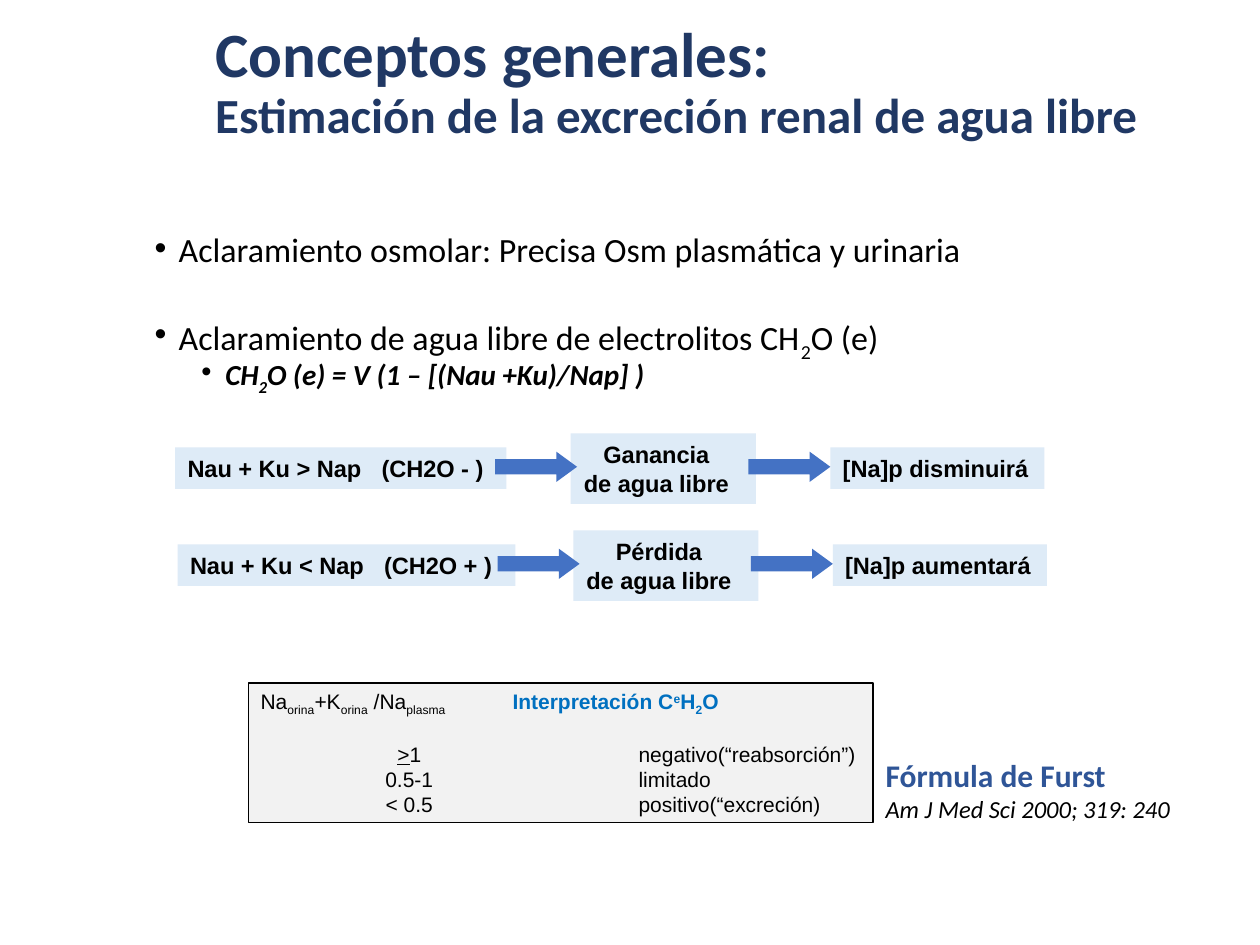
import pptx
import pptx.dml.color
import pptx.enum.shapes
import pptx.enum.text
import pptx.oxml.ns
import pptx.util
from lxml import etree

# The slide is a grid of 100 columns by 75 rows
CELL = pptx.util.Inches(0.1)
COLUMNS, ROWS = 100, 75
RECTANGLE = pptx.enum.shapes.MSO_SHAPE.RECTANGLE
ARROW = pptx.enum.shapes.MSO_SHAPE.RIGHT_ARROW
CENTER = pptx.enum.text.PP_ALIGN.CENTER
MIDDLE = pptx.enum.text.MSO_ANCHOR.MIDDLE
BLACK, NAVY, BLUE = "000000", "203864", "0070C0"
SUBSCRIPT, SUPERSCRIPT = -25000, 30000

# Each flow row: condition and its width, effect, result
FLOWS = [
    (("Nau + Ku > Nap\t(CH2O - )", 26.3), "Ganancia\vde agua libre", "[Na]p disminuirá"),
    (("Nau + Ku < Nap\t(CH2O + )", 26.8), "Pérdida\vde agua libre", "[Na]p aumentará"),
]


def cells(*counts):
    return [round(count * CELL) for count in counts]


def color(hex_string):
    return pptx.dml.color.RGBColor.from_string(hex_string)


def set_font(font, size, name, hex_string=BLACK, bold=False, italic=False):
    font.size, font.name = pptx.util.Pt(size), name
    font.color.rgb = color(hex_string)
    font.bold, font.italic = bold, italic


def add_child(parent, tag, **attributes):
    child = etree.SubElement(parent, pptx.oxml.ns.qn(tag))
    for key, value in attributes.items():
        child.set(key, str(value))
    return child


def add_runs(paragraph, *pieces):
    """Add plain strings, or (text, baseline) pairs for raised and lowered text."""
    runs = []
    for piece in pieces:
        text, baseline = (piece, 0) if isinstance(piece, str) else piece
        run = paragraph.add_run()
        run.text = text
        if baseline:
            run.font._element.set("baseline", str(baseline))
        runs.append(run)
    return runs


def set_tabs(paragraph, *stops):
    """Each stop is a column count and an alignment: l or ctr."""
    tab_list = add_child(paragraph._element.get_or_add_pPr(), "a:tabLst")
    for position, alignment in stops:
        add_child(tab_list, "a:tab", pos=cells(position)[0], algn=alignment)


def set_bullet(paragraph, indent):
    properties = paragraph._element.get_or_add_pPr()
    properties.set("marL", str(cells(indent)[0]))
    properties.set("indent", str(cells(-1.9)[0]))
    add_child(properties, "a:buFont", typeface="Arial")
    add_child(properties, "a:buChar", char="•")


def add_text(slide, *place):
    frame = slide.shapes.add_textbox(*cells(*place)).text_frame
    frame.word_wrap = True
    return frame


def next_paragraph(frame):
    first = frame.paragraphs[0]
    return frame.add_paragraph() if first.runs else first


def add_block(slide, kind, place, fill, line=None):
    shape = slide.shapes.add_shape(kind, *cells(*place))
    shape.shadow.inherit = False
    shape.fill.solid()
    shape.fill.fore_color.rgb = color(fill)
    if line:
        shape.line.color.rgb = color(line)
        shape.line.width = pptx.util.Pt(0.75)
    else:
        shape.line.fill.background()
    shape.text_frame.word_wrap = True
    return shape


def add_label(slide, text, *place):
    shape = add_block(slide, RECTANGLE, place, "DEEBF7")
    frame = shape.text_frame
    for line in text.split("\v"):
        paragraph = next_paragraph(frame)
        paragraph.alignment = pptx.enum.text.PP_ALIGN.LEFT
        add_runs(paragraph, line)
        set_font(paragraph.font, 13.5, "Arial", bold=True)
    return frame


def add_arrow(slide, *place):
    arrow = add_block(slide, ARROW, place, "4472C4")
    arrow.adjustments[0], arrow.adjustments[1] = 0.5, 0.685


def add_title(slide):
    frame = add_text(slide, 16.1, -0.6, 81.9, 14.5)
    frame.vertical_anchor = MIDDLE
    paragraph = frame.paragraphs[0]
    paragraph.line_spacing = 0.9
    heading, = add_runs(paragraph, "Conceptos generales:")
    paragraph.add_line_break()
    subheading, = add_runs(paragraph, "Estimación de la excreción renal de agua libre")
    set_font(heading.font, 36, "Calibri", NAVY, bold=True)
    set_font(subheading.font, 28, "Calibri", NAVY, bold=True)


def add_bullets(slide):
    frame = add_text(slide, 11.3, 18.5, 71.7, 12)
    bullets = [
        (["Aclaramiento osmolar: Precisa Osm plasmática y urinaria"], 0, 0),
        (["Aclaramiento de agua libre de electrolitos CH", ("2", SUBSCRIPT), "O (e)"], 0, 32.5),
        (["CH", ("2", SUBSCRIPT), "O (e) = V (1 – [(Nau +Ku)/Nap] )"], 1, 3.8),
    ]
    for pieces, level, space in bullets:
        paragraph = next_paragraph(frame)
        paragraph.level = level
        paragraph.line_spacing = 0.7
        paragraph.space_before = pptx.util.Pt(space)
        set_bullet(paragraph, 5.6 if level else 1.9)
        add_runs(paragraph, *pieces)
        set_font(paragraph.font, 16.6 if level else 19.4, "Calibri",
                 bold=level == 1, italic=level == 1)


def add_flow(slide, row, condition, effect, result):
    left, top = 0.2 * row, 34.4 + 7.7 * row
    text, width = condition
    frame = add_label(slide, text, 13.9 + left, top + 1.1, width, 3.3)
    set_tabs(frame.paragraphs[0], (15.4, "l"))
    add_label(slide, result, 65.9 + left, top + 1.1, 17, 3.3)
    frame = add_label(slide, effect, 45.3 + left, top, 14.7, 5.6)
    frame.margin_left, frame.margin_right = cells(0.4, 1.5)
    for paragraph in frame.paragraphs:
        paragraph.alignment = CENTER
    for arrow_left in (39.3, 59.4):
        add_arrow(slide, arrow_left + left, top + 1.45, 6.5, 2.4)


def add_interpretation(slide):
    frame = add_block(slide, RECTANGLE, (19.7, 54.2, 49.6, 11.1), "F2F2F2", BLACK).text_frame
    # Heading line
    heading = frame.paragraphs[0]
    add_runs(heading, "Na", ("orina", SUBSCRIPT), "+K", ("orina", SUBSCRIPT),
             " /Na", ("plasma", SUBSCRIPT), "\t")
    blue_runs = add_runs(heading, "Interpretación C", ("e", SUPERSCRIPT), "H",
                         ("2", SUBSCRIPT), "O")
    set_tabs(heading, (20, "l"))
    # Ranges and their meaning
    ranges = [(">", "1", "negativo(“reabsorción”)"), ("", "0.5-1", "limitado"),
              ("", "< 0.5", "positivo(“excreción)")]
    for sign, value, meaning in ranges:
        paragraph = frame.add_paragraph()
        add_runs(paragraph, "\t")
        if sign:
            paragraph.space_before = pptx.util.Pt(14)
            add_runs(paragraph, sign)[0].font.underline = True
        add_runs(paragraph, f"{value}\t{meaning}")
        set_tabs(paragraph, (11.8, "ctr"), (30, "l"))
    for paragraph in frame.paragraphs:
        paragraph.alignment = pptx.enum.text.PP_ALIGN.LEFT
        set_font(paragraph.font, 12, "Arial")
    for run in blue_runs:
        run.font.bold = True
        run.font.color.rgb = color(BLUE)


def add_citation(slide):
    frame = add_text(slide, 69.3, 59.5, 24.8, 6.4)
    name = next_paragraph(frame)
    add_runs(name, "Fórmula de Furst")
    set_font(name.font, 18, "Calibri", "2F5597", bold=True)
    reference = next_paragraph(frame)
    add_runs(reference, "Am J Med Sci 2000; 319: 240")
    set_font(reference.font, 14, "Calibri", italic=True)


def main():
    presentation = pptx.Presentation()
    presentation.slide_width, presentation.slide_height = cells(COLUMNS, ROWS)
    slide = presentation.slides.add_slide(presentation.slide_layouts[6])
    add_title(slide)
    add_bullets(slide)
    for row, flow in enumerate(FLOWS):
        add_flow(slide, row, *flow)
    add_interpretation(slide)
    add_citation(slide)
    presentation.save("out.pptx")


if __name__ == "__main__":
    main()
